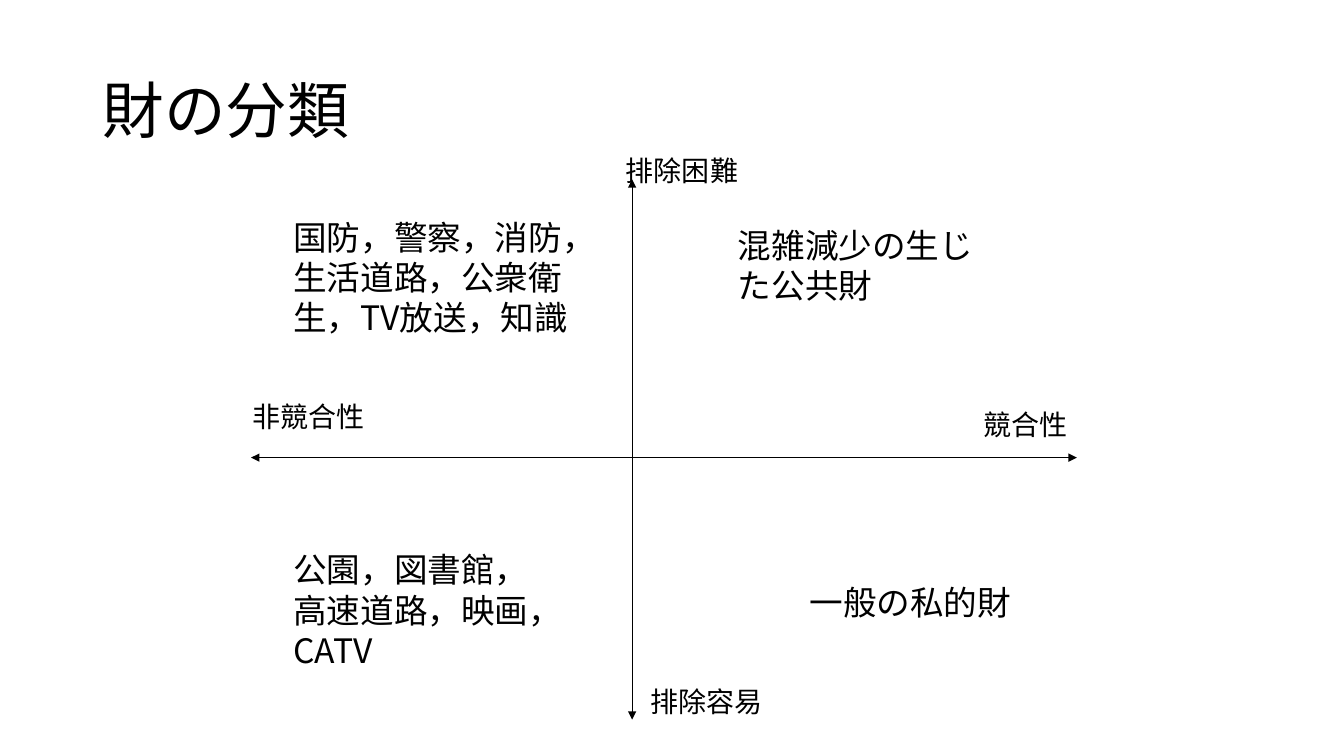
from lxml import etree
from pptx import Presentation
from pptx import util as u
from pptx.dml.color import RGBColor
from pptx.enum import shapes, text
from pptx.oxml import ns

BLACK = RGBColor(0, 0, 0)
FONT = "Noto Sans CJK JP"
PX = u.Inches(1) // 100

AXIS_LABELS = [
    ("排除困難", 611, 147, 134),
    ("排除容易", 635, 674, 149),
    ("競合性", 966, 399, 110),
    ("非競合性", 241, 391, 134),
]
GOODS = [
    ("国防，警察，消防，生活道路，公衆衛生，TV放送，知識", 281, 210, 299, 131),
    ("一般の私的財", 793, 572, 228, 50),
    ("混雑減少の生じた公共財", 722, 218, 283, 91),
    ("公園，図書館，高速道路，映画，CATV", 281, 540, 268, 131),
]


class Slide:
    def __init__(self, deck):
        self.page = deck.slides.add_slide(deck.slide_layouts[6])

    def add_text(self, words, left, top, width, height, size):
        box = self.page.shapes.add_textbox(left * PX, top * PX, width * PX, height * PX)
        frame = box.text_frame
        frame.text = words
        frame.word_wrap = True
        for span in frame.paragraphs[0].runs:
            span.font.size = u.Pt(size)
            span.font.name = FONT
            span.font.color.rgb = BLACK
            east_asian = etree.SubElement(span.font._element, ns.qn("a:ea"))
            east_asian.set("typeface", FONT)
        return frame

    def title(self, words, left, top, width, height):
        frame = self.add_text(words, left, top, width, height, 44)
        frame.vertical_anchor = text.MSO_ANCHOR.MIDDLE
        frame.paragraphs[0].line_spacing = 0.9

    def label(self, words, left, top, width, height, size):
        frame = self.add_text(words, left, top, width, height, size)
        frame.auto_size = text.MSO_AUTO_SIZE.SHAPE_TO_FIT_TEXT

    def axis(self, left, top, right, bottom):
        arrow = self.page.shapes.add_connector(
            shapes.MSO_CONNECTOR.STRAIGHT, left * PX, top * PX, right * PX, bottom * PX
        )
        arrow.line.color.rgb = BLACK
        arrow.line.width = u.Pt(0.75)
        properties = arrow._element.spPr
        outline = properties.find(ns.qn("a:ln"))
        for end in ("a:headEnd", "a:tailEnd"):
            etree.SubElement(outline, ns.qn(end)).set("type", "triangle")
        etree.SubElement(properties, ns.qn("a:effectLst"))


def main():
    deck = Presentation()
    deck.slide_width, deck.slide_height = u.Inches(13.33), u.Inches(7.5)
    slide = Slide(deck)
    slide.title("財の分類", 92, 40, 1150, 145)
    slide.axis(249, 454, 1068, 454)
    slide.axis(627, 714, 627, 178)
    for words, left, top, width in AXIS_LABELS:
        slide.label(words, left, top, width, 43, 20)
    for words, left, top, width, height in GOODS:
        slide.label(words, left, top, width, height, 24)
    deck.save("out.pptx")


if __name__ == "__main__":
    main()
